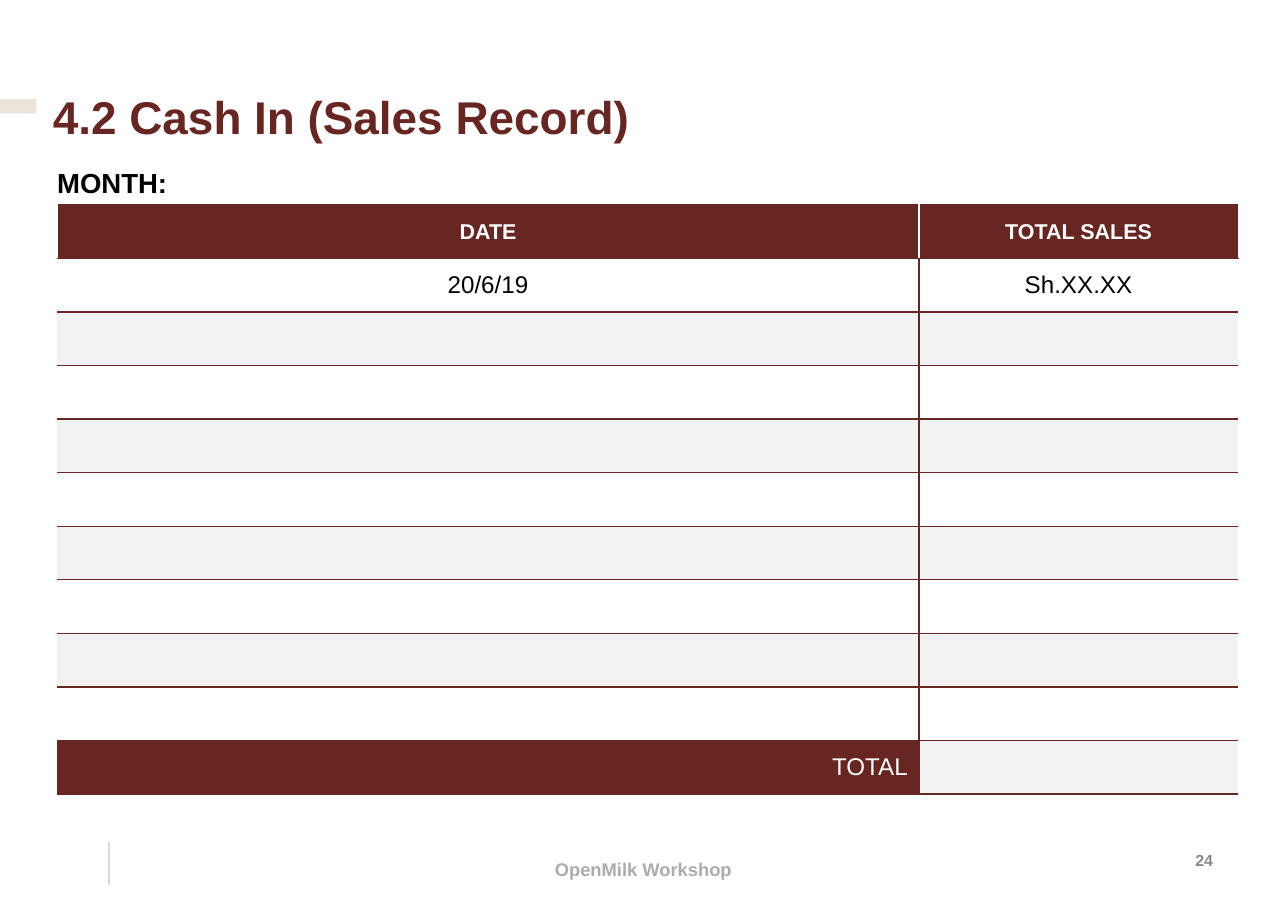
from lxml.etree import SubElement
from pptx import Presentation
from pptx.dml.color import RGBColor
from pptx.enum.shapes import MSO_CONNECTOR, MSO_SHAPE
from pptx.enum.text import MSO_ANCHOR, MSO_AUTO_SIZE, PP_ALIGN
from pptx.oxml.ns import qn
from pptx.util import Inches, Pt

COLORS = {
    "maroon": "682622", "white": "FFFFFF", "band": "F2F2F2", "black": "000000",
    "beige": "EAE4D9", "rule": "D8D8D8", "footer": "AEABAB", "number": "888888",
}


def write(frame, text, size, color, bold=False, align=PP_ALIGN.LEFT, anchor=MSO_ANCHOR.MIDDLE):
    """Put one formatted run into the first paragraph of a text frame or cell frame."""
    frame.word_wrap = True
    frame.vertical_anchor = anchor
    paragraph = frame.paragraphs[0]
    paragraph.alignment = align
    run = paragraph.add_run()
    run.text = text
    run.font.name = "Arial"
    run.font.size = Pt(size)
    run.font.bold = bold
    run.font.color.rgb = RGBColor.from_string(COLORS[color])


def add_border(cell, side, color):
    """Draw one cell side (L, R, T, B), or clear it when color is None."""
    line = SubElement(cell._tc.get_or_add_tcPr(), qn(f"a:ln{side}"), w=str(Pt(1)))
    if color is None:
        SubElement(line, qn("a:noFill"))
    else:
        fill = SubElement(line, qn("a:solidFill"))
        SubElement(fill, qn("a:srgbClr"), val=COLORS[color])


presentation = Presentation()
presentation.slide_width = Inches(11.69)
presentation.slide_height = Inches(8.27)
slide = presentation.slides.add_slide(presentation.slide_layouts[5])

# Title with its accent bar
accent = slide.shapes.add_shape(MSO_SHAPE.RECTANGLE, Inches(0), Inches(0.9), Inches(0.33), Inches(0.13))
accent.shadow.inherit = False
accent.fill.solid()
accent.fill.fore_color.rgb = RGBColor.from_string(COLORS["beige"])
accent.line.fill.background()

title = slide.shapes.title
title.left, title.top, title.width, title.height = Inches(0.28), Inches(0.16), Inches(10.97), Inches(1.13)
title_frame = title.text_frame
title_frame.auto_size = MSO_AUTO_SIZE.NONE
title_frame.margin_left = Inches(0.2)
title_frame.margin_top = Inches(0.59)
write(title_frame, "4.2 Cash In (Sales Record)", 30, "maroon", True, anchor=MSO_ANCHOR.TOP)
title_frame.paragraphs[0].line_spacing = 1.1

# Month label, footer and page number
labels = [
    ("MONTH:", 0.42, 1.46, 3.91, 0.4, 18, "black", PP_ALIGN.LEFT, MSO_ANCHOR.TOP, 0.05),
    ("OpenMilk Workshop", 4.37, 7.59, 2.94, 0.55, 12, "footer", PP_ALIGN.CENTER, MSO_ANCHOR.MIDDLE, 0),
    ("24", 10.68, 7.61, 0.5, 0.4, 10.5, "number", PP_ALIGN.CENTER, MSO_ANCHOR.MIDDLE, 0.05),
]
for text, left, top, width, height, size, color, align, anchor, margin_bottom in labels:
    box = slide.shapes.add_textbox(Inches(left), Inches(top), Inches(width), Inches(height))
    box.text_frame.margin_bottom = Inches(margin_bottom)
    write(box.text_frame, text, size, color, True, align, anchor)

footer_rule = slide.shapes.add_connector(
    MSO_CONNECTOR.STRAIGHT, Inches(0.99), Inches(7.64), Inches(0.99), Inches(8.03))
footer_rule.line.color.rgb = RGBColor.from_string(COLORS["rule"])
footer_rule.line.width = Pt(0.75)
SubElement(footer_rule._element.spPr, qn("a:effectLst"))

# Sales table: header, one example, blank banded rows, total
row_count = 11
last_row = row_count - 1
table = slide.shapes.add_table(
    row_count, 2, Inches(0.52), Inches(1.86), Inches(10.72), Inches(5.35)).table
table.columns[0].width = Inches(7.82)
table.columns[1].width = Inches(2.9)

for row in range(row_count):
    for column in range(2):
        cell = table.cell(row, column)
        divider = "white" if row == 0 else "maroon"
        outer = "white" if row == 0 else None
        add_border(cell, "L", divider if column == 1 else outer)
        add_border(cell, "R", divider if column == 0 else outer)
        add_border(cell, "T", "maroon")
        add_border(cell, "B", "maroon")
        if row == 0 or (row, column) == (last_row, 0):
            fill = "maroon"
        else:
            fill = "white" if row % 2 else "band"
        cell.fill.solid()
        cell.fill.fore_color.rgb = RGBColor.from_string(COLORS[fill])

entries = [
    (0, 0, "DATE", 14, "white", True, PP_ALIGN.CENTER),
    (0, 1, "TOTAL SALES", 14, "white", True, PP_ALIGN.CENTER),
    (1, 0, "20/6/19", 15.8, "black", False, PP_ALIGN.CENTER),
    (1, 1, "Sh.XX.XX", 15.8, "black", False, PP_ALIGN.CENTER),
    (last_row, 0, "TOTAL", 15.8, "white", False, PP_ALIGN.RIGHT),
]
for row, column, text, size, color, bold, align in entries:
    cell = table.cell(row, column)
    write(cell.text_frame, text, size, color, bold, align)
    cell.vertical_anchor = MSO_ANCHOR.MIDDLE

presentation.save("out.pptx")
